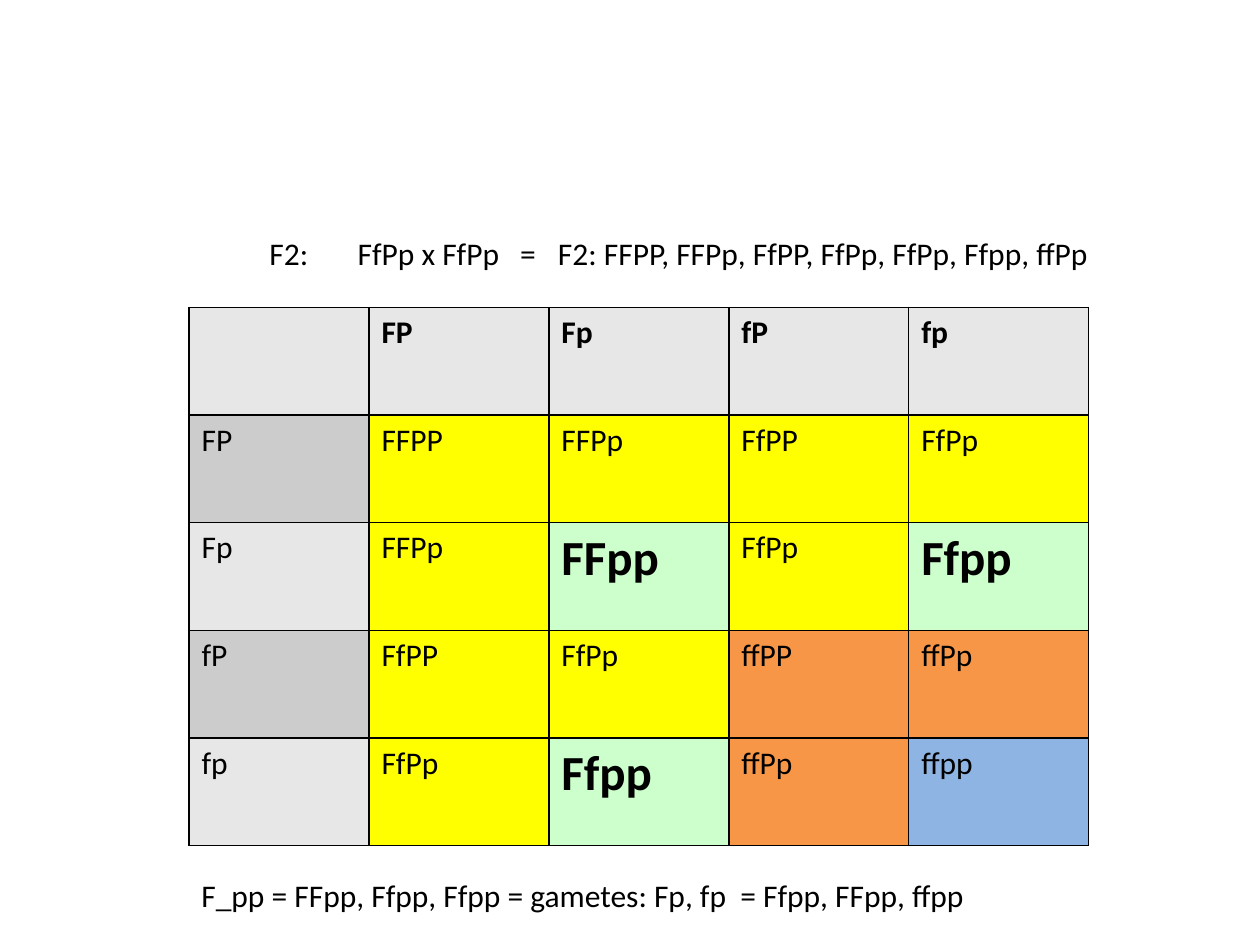
from lxml import etree
from pptx import Presentation
from pptx.dml.color import RGBColor
from pptx.oxml import parse_xml
from pptx.oxml.ns import nsdecls, qn
from pptx.util import Inches, Pt

COLORS = {
    "text": "000000", "border": "000000",
    "light": "E7E7E7", "dark": "CCCCCC",
    "F_P_": "FFFF00", "F_pp": "CCFFCC", "ffP_": "F79646", "ffpp": "8EB4E3",
}
GAMETES = ["FP", "Fp", "fP", "fp"]


def format_paragraph(paragraph, size=18, bold=False):
    paragraph.font.name = "Calibri"
    paragraph.font.size = Pt(size)
    paragraph.font.bold = bold
    paragraph.font.color.rgb = RGBColor.from_string(COLORS["text"])


def add_line(slide, left, top, width, height, words, tabs=()):
    box = slide.shapes.add_textbox(Inches(left), Inches(top), Inches(width), Inches(height))
    box.text_frame.word_wrap = True
    paragraph = box.text_frame.paragraphs[0]
    paragraph.text = words
    if tabs:
        tab_list = etree.SubElement(paragraph._p.get_or_add_pPr(), qn("a:tabLst"))
        for position in tabs:
            etree.SubElement(tab_list, qn("a:tab"), pos=str(Inches(position)), algn="l")
    format_paragraph(paragraph)


presentation = Presentation()
presentation.slide_width = Inches(10)
presentation.slide_height = Inches(7.5)
slide = presentation.slides.add_slide(presentation.slide_layouts[6])

# Punnett square
size = len(GAMETES) + 1
frame = slide.shapes.add_table(size, size, Inches(1.5), Inches(2.44), Inches(7.14), Inches(4.27))
table = frame.table
table.horz_banding = False

for row in range(size):
    for column in range(size):
        cell = table.cell(row, column)
        words, font_size, bold = "", 18, False
        if row == 0:
            fill = "light"
            words = GAMETES[column - 1] if column else ""
            bold = True
        elif column == 0:
            fill = "dark" if row % 2 else "light"
            words = GAMETES[row - 1]
        else:
            # Pair the alleles of both gametes, dominant letter first
            letters = GAMETES[row - 1] + GAMETES[column - 1]
            words = "".join(sorted(letters, key=lambda letter: (letter.lower(), letter)))
            fill = ("F_" if "F" in words else "ff") + ("P_" if "P" in words else "pp")
            if fill == "F_pp":
                font_size, bold = 28, True

        paragraph = cell.text_frame.paragraphs[0]
        paragraph.text = words
        format_paragraph(paragraph, font_size, bold)
        cell.fill.solid()
        cell.fill.fore_color.rgb = RGBColor.from_string(COLORS[fill])

        # Cell borders
        for index, side in enumerate(("lnL", "lnR", "lnT", "lnB")):
            border = parse_xml(
                f'<a:{side} {nsdecls("a")} w="{Pt(1)}"><a:solidFill>'
                f'<a:srgbClr val="{COLORS["border"]}"/></a:solidFill></a:{side}>')
            cell._tc.get_or_add_tcPr().insert(index, border)

# Cross above the table and result below it
add_line(slide, 2.04, 1.81, 6.77, 0.71,
         "F2:\tFfPp x FfPp\t=\tF2: FFPP, FFPp, FfPP, FfPp, FfPp, Ffpp, ffPp",
         tabs=(0.7, 1.99, 2.29))
add_line(slide, 1.5, 6.9, 6.33, 0.4,
         "F_pp = FFpp, Ffpp, Ffpp = gametes: Fp, fp  = Ffpp, FFpp, ffpp")

presentation.save("out.pptx")
